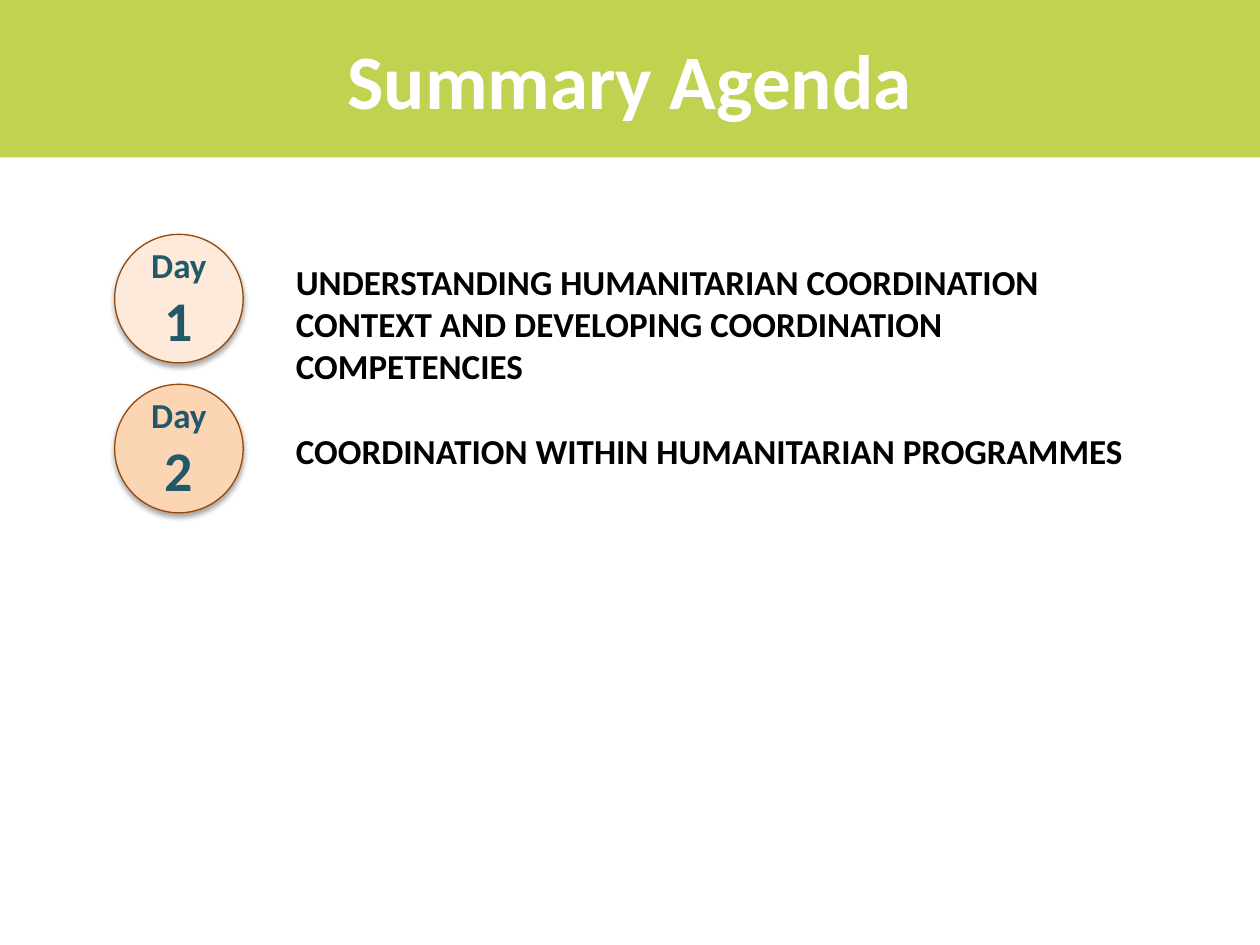
from lxml import etree
from pptx import Presentation
from pptx.dml.color import RGBColor
from pptx.enum.shapes import MSO_SHAPE
from pptx.enum.text import MSO_ANCHOR, PP_ALIGN
from pptx.oxml.ns import qn
from pptx.util import Inches, Pt

OVAL = MSO_SHAPE.OVAL
MIDDLE, TOP = MSO_ANCHOR.MIDDLE, MSO_ANCHOR.TOP
CENTER, LEFT = PP_ALIGN.CENTER, PP_ALIGN.LEFT

FONT = "Calibri"
GREEN = RGBColor(0xC1, 0xD1, 0x50)
WHITE = RGBColor(0xFF, 0xFF, 0xFF)
BLACK = RGBColor(0x00, 0x00, 0x00)
TEAL = RGBColor(0x21, 0x59, 0x68)
BROWN = RGBColor(0x98, 0x48, 0x07)
PALE_PEACH = RGBColor(0xFD, 0xEA, 0xDA)
PEACH = RGBColor(0xFC, 0xD5, 0xB5)

# Content: day number, circle colour, topic, topic top and height
TITLE = "Summary Agenda"
DAYS = [
    ("1", PALE_PEACH, "UNDERSTANDING HUMANITARIAN COORDINATION CONTEXT "
     "AND DEVELOPING COORDINATION COMPETENCIES", 2.02, 0.77),
    ("2", PEACH, "COORDINATION WITHIN HUMANITARIAN PROGRAMMES", 3.36, 0.44),
]

# Layout in inches
CIRCLE_LEFT, CIRCLE_TOP, CIRCLE_SIZE, DAY_PITCH = 0.91, 1.86, 1.02, 1.19
TOPIC_LEFT, TOPIC_WIDTH = 2.25, 7.19


def write(shape, runs, color, alignment, anchor):
    """Fill a shape with one paragraph of bold (text, size) runs."""
    frame = shape.text_frame
    frame.word_wrap = True
    frame.vertical_anchor = anchor
    paragraph = frame.paragraphs[0]
    paragraph.alignment = alignment
    for text, size in runs:
        run = paragraph.add_run()
        run.text = text
        run.font.name = FONT
        run.font.size = Pt(size)
        run.font.bold = True
        run.font.color.rgb = color


def add_soft_shadow(shape):
    shape.shadow.inherit = False
    effects = shape.element.spPr.find(qn("a:effectLst"))
    shadow = etree.SubElement(
        effects, qn("a:outerShdw"), blurRad=str(Pt(3.1)), dist=str(Pt(1.8)),
        dir="5400000", rotWithShape="0")
    color = etree.SubElement(shadow, qn("a:srgbClr"), val=str(BLACK))
    etree.SubElement(color, qn("a:alpha"), val="35000")


presentation = Presentation()
presentation.slide_width = Inches(10)
presentation.slide_height = Inches(7.5)
slide = presentation.slides.add_slide(presentation.slide_layouts[5])

# Title band
title = slide.shapes.title
title.left, title.top = Inches(0), Inches(0)
title.width, title.height = Inches(10), Inches(1.25)
title.fill.solid()
title.fill.fore_color.rgb = GREEN
write(title, [(TITLE, 44)], WHITE, CENTER, MIDDLE)

# One circle and topic per day
for index, (number, fill, topic, topic_top, topic_height) in enumerate(DAYS):
    circle = slide.shapes.add_shape(
        OVAL, Inches(CIRCLE_LEFT), Inches(CIRCLE_TOP + index * DAY_PITCH),
        Inches(CIRCLE_SIZE), Inches(CIRCLE_SIZE))
    circle.fill.solid()
    circle.fill.fore_color.rgb = fill
    circle.line.color.rgb = BROWN
    circle.line.width = Pt(0.75)
    add_soft_shadow(circle)
    write(circle, [("Day ", 20), (number, 32)], TEAL, CENTER, MIDDLE)

    topic_box = slide.shapes.add_textbox(
        Inches(TOPIC_LEFT), Inches(topic_top),
        Inches(TOPIC_WIDTH), Inches(topic_height))
    write(topic_box, [(topic, 20)], BLACK, LEFT, TOP)

presentation.save("out.pptx")
